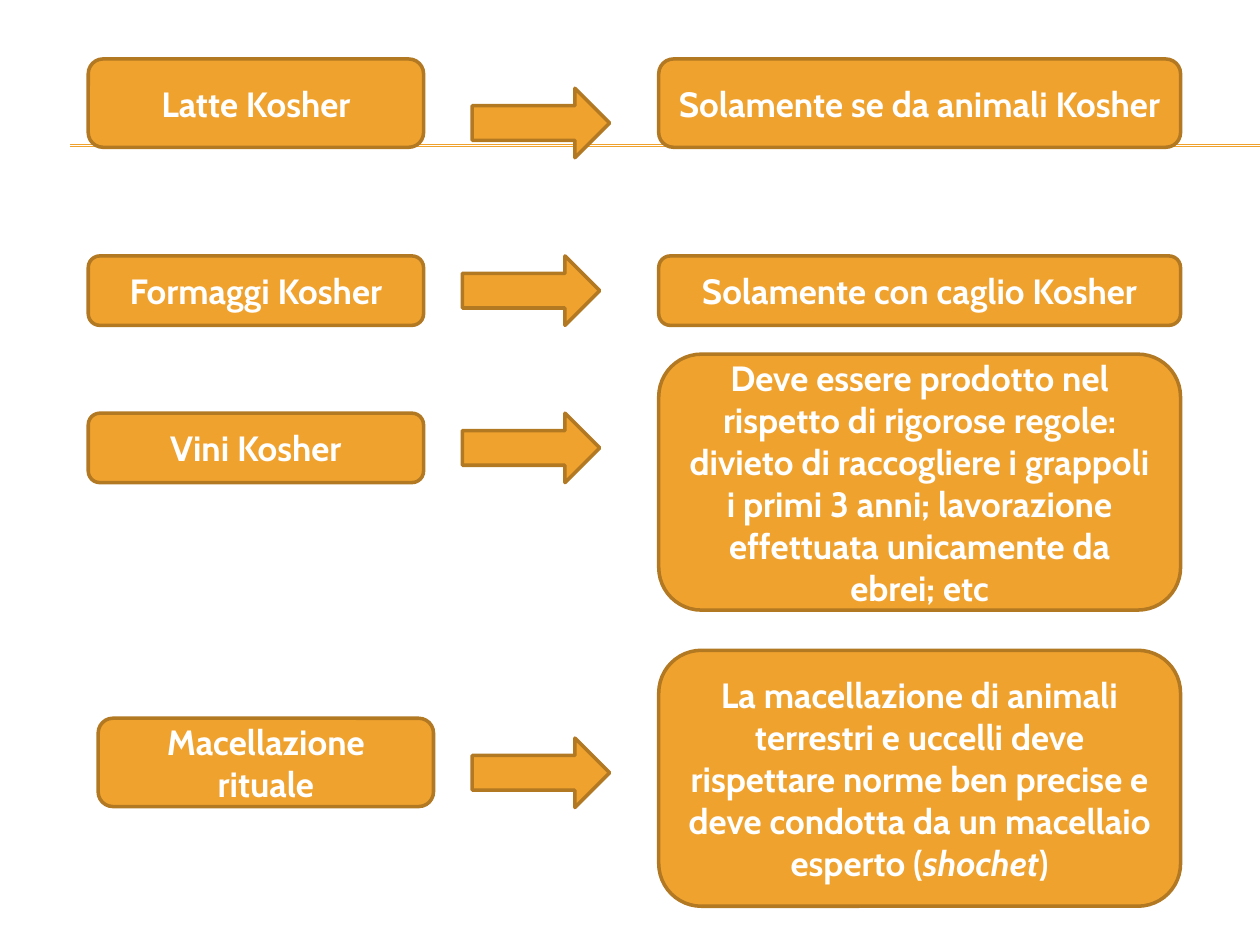
from dataclasses import dataclass

from lxml.etree import SubElement
from pptx import Presentation
from pptx.dml.color import RGBColor
from pptx.enum.shapes import MSO_CONNECTOR, MSO_SHAPE
from pptx.enum.text import MSO_ANCHOR, PP_ALIGN
from pptx.oxml.ns import qn
from pptx.util import Cm, Pt


@dataclass(frozen=True)
class Theme:
    fill: RGBColor = RGBColor(0xF0, 0xA2, 0x2E)
    outline: RGBColor = RGBColor(0xB2, 0x78, 0x22)
    text: RGBColor = RGBColor(0xFF, 0xFF, 0xFF)
    font: str = "Cabin"
    size: Pt = Pt(20)
    outline_width: Pt = Pt(2)
    rule_width: Pt = Pt(0.75)


THEME = Theme()

# Content: product, its rule as (text, italic) spans
# Places in cm: indent, then (top, height) of product and rule, then arrow top
ROWS = [
    ("Latte Kosher", [("Solamente se da animali Kosher", False)],
     0.2, (1.19, 1.78), (1.19, 1.78), 1.78),
    ("Formaggi Kosher", [("Solamente con caglio Kosher", False)],
     0, (5.16, 1.4), (5.16, 1.4), 5.16),
    ("Vini Kosher",
     [("Deve essere prodotto nel rispetto di rigorose regole: divieto di "
       "raccogliere i grappoli i primi 3 anni; lavorazione effettuata "
       "unicamente da ebrei; etc", False)],
     0, (8.33, 1.4), (7.14, 5.16), 8.33),
    ("Macellazione rituale",
     [("La macellazione di animali terrestri e uccelli deve rispettare norme "
       "ben precise e deve condotta da un macellaio esperto (", False),
      ("shochet", True), (")", False)],
     0.2, (14.48, 1.78), (13.11, 5.16), 14.88),
]
PRODUCT_LEFT, PRODUCT_WIDTH = 1.78, 6.76
ARROW_LEFT, ARROW_WIDTH, ARROW_HEIGHT = 9.32, 2.77, 1.4
RULE_LEFT, RULE_WIDTH = 13.28, 10.52
PAGE_WIDTH, PAGE_HEIGHT = 25.4, 19.05
HEADER_LEFT, HEADER_TOPS = 1.42, (2.92, 2.95)


def add_block(page, preset, left, top, width, height):
    block = page.shapes.add_shape(preset, Cm(left), Cm(top), Cm(width), Cm(height))
    block.shadow.inherit = False
    block.fill.solid()
    block.fill.fore_color.rgb = THEME.fill
    block.line.color.rgb = THEME.outline
    block.line.width = THEME.outline_width
    return block


def add_box(page, left, top, width, height, spans):
    box = add_block(page, MSO_SHAPE.ROUNDED_RECTANGLE, left, top, width, height)
    frame = box.text_frame
    frame.word_wrap = True
    frame.vertical_anchor = MSO_ANCHOR.MIDDLE
    para = frame.paragraphs[0]
    para.alignment = PP_ALIGN.CENTER
    for text, italic in spans:
        span = para.add_run()
        span.text = text
        span.font.name = THEME.font
        span.font.size = THEME.size
        span.font.bold = True
        span.font.italic = italic
        span.font.color.rgb = THEME.text


def add_header_line(page, top):
    line = page.shapes.add_connector(
        MSO_CONNECTOR.STRAIGHT, Cm(HEADER_LEFT), Cm(top), Cm(PAGE_WIDTH), Cm(top))
    line.line.color.rgb = THEME.fill
    line.line.width = THEME.rule_width
    SubElement(line._element.spPr, qn("a:effectLst"))


def main():
    deck = Presentation()
    deck.slide_width, deck.slide_height = Cm(PAGE_WIDTH), Cm(PAGE_HEIGHT)
    page = deck.slides.add_slide(deck.slide_layouts[6])

    # Double line behind the first row
    for top in HEADER_TOPS:
        add_header_line(page, top)

    # One row per product: product, arrow, rule
    for row, (product, rule, indent, product_span, rule_span, arrow_top) in enumerate(ROWS):
        product_indent = indent if row == len(ROWS) - 1 else 0
        add_box(page, PRODUCT_LEFT + product_indent, product_span[0],
                PRODUCT_WIDTH, product_span[1], [(product, False)])
        add_block(page, MSO_SHAPE.RIGHT_ARROW, ARROW_LEFT + indent, arrow_top,
                  ARROW_WIDTH, ARROW_HEIGHT)
        add_box(page, RULE_LEFT, rule_span[0], RULE_WIDTH, rule_span[1], rule)

    deck.save("out.pptx")


if __name__ == "__main__":
    main()
